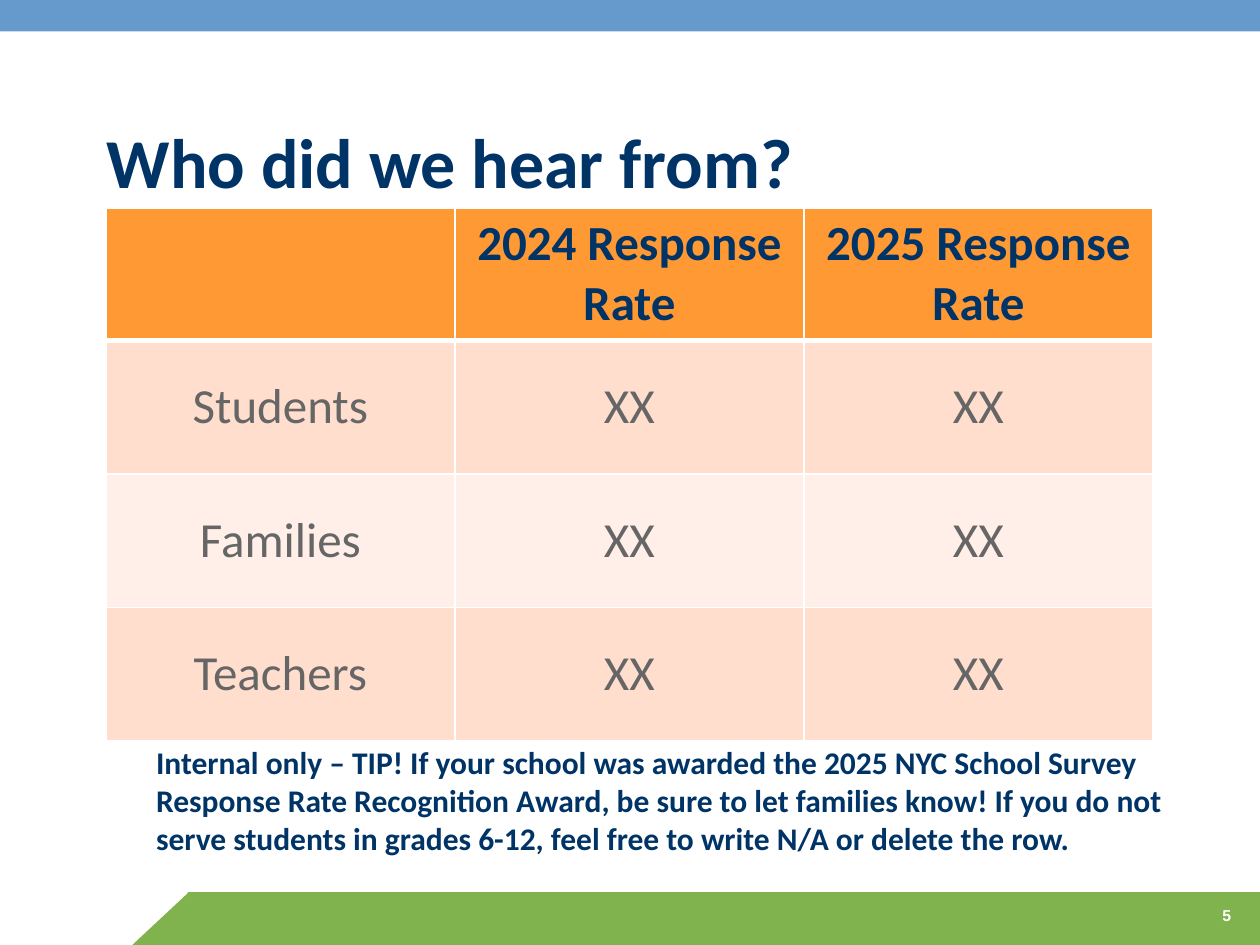
from dataclasses import dataclass

from lxml import etree
from pptx import Presentation
from pptx.dml.color import RGBColor
from pptx.enum.shapes import MSO_SHAPE
from pptx.enum.text import MSO_ANCHOR, PP_ALIGN
from pptx.oxml.ns import qn
from pptx.util import Inches, Pt

RECTANGLE, RIGHT_TRIANGLE = MSO_SHAPE.RECTANGLE, MSO_SHAPE.RIGHT_TRIANGLE
TOP, MIDDLE, BOTTOM = MSO_ANCHOR.TOP, MSO_ANCHOR.MIDDLE, MSO_ANCHOR.BOTTOM
LEFT, CENTER, RIGHT = PP_ALIGN.LEFT, PP_ALIGN.CENTER, PP_ALIGN.RIGHT

WHITE = RGBColor(0xFF, 0xFF, 0xFF)
GREEN = RGBColor(0x80, 0xB3, 0x4D)
BLUE = RGBColor(0x66, 0x99, 0xCC)
NAVY = RGBColor(0x00, 0x33, 0x66)
GRAY = RGBColor(0x66, 0x66, 0x66)
ORANGE = RGBColor(0xFF, 0x99, 0x33)
PEACH = RGBColor(0xFF, 0xDE, 0xCE)
PALE_PEACH = RGBColor(0xFF, 0xEF, 0xE8)


@dataclass(frozen=True)
class Box:
    left: float
    top: float
    width: float
    height: float

    def lengths(self):
        return [Inches(v) for v in (self.left, self.top, self.width, self.height)]


@dataclass(frozen=True)
class Style:
    size: int
    color: RGBColor
    bold: bool = True
    font: str = "Calibri"
    align: PP_ALIGN = LEFT


@dataclass(frozen=True)
class Band:
    box: Box
    color: RGBColor
    preset: MSO_SHAPE = RECTANGLE
    flipped: bool = False


@dataclass(frozen=True)
class Label:
    text: str
    box: Box
    style: Style
    anchor: MSO_ANCHOR = BOTTOM


BANDS = [
    Band(Box(1.49, 7.08, 8.51, 0.42), GREEN),
    Band(Box(1.05, 7.08, 0.45, 0.42), GREEN, RIGHT_TRIANGLE, flipped=True),
    Band(Box(0, 0, 10, 0.25), BLUE),
]
LABELS = [
    Label("Internal only – TIP! If your school was awarded the 2025 NYC School "
          "Survey Response Rate Recognition Award, be sure to let families know! "
          "If you do not serve students in grades 6-12, feel free to write N/A "
          "or delete the row.",
          Box(1.14, 5.97, 8.5, 0.88), Style(18, NAVY)),
    Label("Who did we hear from?", Box(0.75, 0.78, 8.5, 0.88), Style(40, NAVY)),
    Label("5", Box(8.7, 7.14, 1.17, 0.25),
          Style(9, WHITE, font="Arial", align=RIGHT), TOP),
]
RESPONSE_RATES = [
    ["", "2024 Response Rate", "2025 Response Rate"],
    ["Students", "XX", "XX"],
    ["Families", "XX", "XX"],
    ["Teachers", "XX", "XX"],
]
ROW_FILLS = [ORANGE, PEACH, PALE_PEACH, PEACH]
ROW_HEIGHTS = [1.05, 1.06, 1.06, 1.06]
COLUMN_WIDTH = 2.77
HEADER_STYLE = Style(28, NAVY, align=CENTER)
BODY_STYLE = Style(28, GRAY, bold=False, align=CENTER)


def write(frame, text: str, style: Style) -> None:
    paragraph = frame.paragraphs[0]
    paragraph.alignment = style.align
    run = paragraph.add_run()
    run.text = text
    run.font.name = style.font
    run.font.size = Pt(style.size)
    run.font.bold = style.bold
    run.font.color.rgb = style.color


def draw_band(slide, band: Band) -> None:
    shape = slide.shapes.add_shape(band.preset, *band.box.lengths())
    shape.shadow.inherit = False
    shape.fill.solid()
    shape.fill.fore_color.rgb = band.color
    shape.line.fill.background()
    if band.flipped:
        shape.element.spPr.xfrm.set("flipH", "1")


def draw_label(slide, label: Label) -> None:
    frame = slide.shapes.add_textbox(*label.box.lengths()).text_frame
    frame.word_wrap = True
    frame.vertical_anchor = label.anchor
    write(frame, label.text, label.style)


def set_borders(cell, weights: dict[str, int]) -> None:
    """Draw white cell borders, with weights in points by edge tag."""
    properties = cell._tc.get_or_add_tcPr()
    for position, (edge, weight) in enumerate(weights.items()):
        line = etree.Element(qn(f"a:{edge}"), w=str(Pt(weight)))
        fill = etree.SubElement(line, qn("a:solidFill"))
        etree.SubElement(fill, qn("a:srgbClr"), val=str(WHITE))
        properties.insert(position, line)


def draw_response_table(slide) -> None:
    column_count = len(RESPONSE_RATES[0])
    box = Box(0.84, 1.65, COLUMN_WIDTH * column_count, sum(ROW_HEIGHTS))
    table = slide.shapes.add_table(
        len(RESPONSE_RATES), column_count, *box.lengths()).table
    for column in table.columns:
        column.width = Inches(COLUMN_WIDTH)
    for r, texts in enumerate(RESPONSE_RATES):
        table.rows[r].height = Inches(ROW_HEIGHTS[r])
        for c, text in enumerate(texts):
            cell = table.cell(r, c)
            cell.fill.solid()
            cell.fill.fore_color.rgb = ROW_FILLS[r]
            cell.vertical_anchor = MIDDLE
            set_borders(cell, {"lnL": 1, "lnR": 1,
                               "lnT": 3 if r == 1 else 1,
                               "lnB": 3 if r == 0 else 1})
            if text:
                write(cell.text_frame, text, BODY_STYLE if r else HEADER_STYLE)


def main() -> None:
    presentation = Presentation()
    presentation.slide_width = Inches(10)
    presentation.slide_height = Inches(7.5)
    slide = presentation.slides.add_slide(presentation.slide_layouts[6])
    for band in BANDS:
        draw_band(slide, band)
    draw_response_table(slide)
    for label in LABELS:
        draw_label(slide, label)
    presentation.save("out.pptx")


if __name__ == "__main__":
    main()
